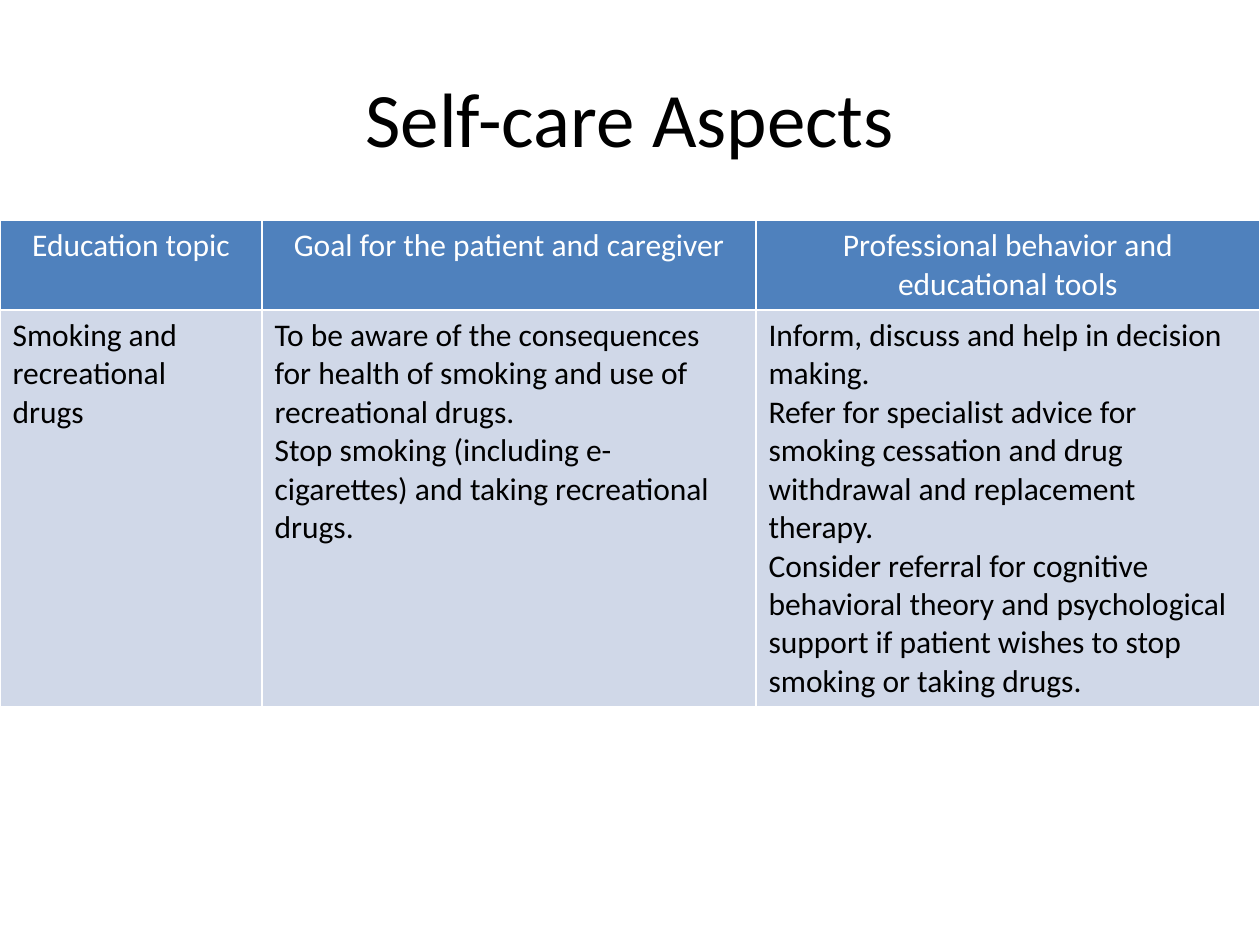
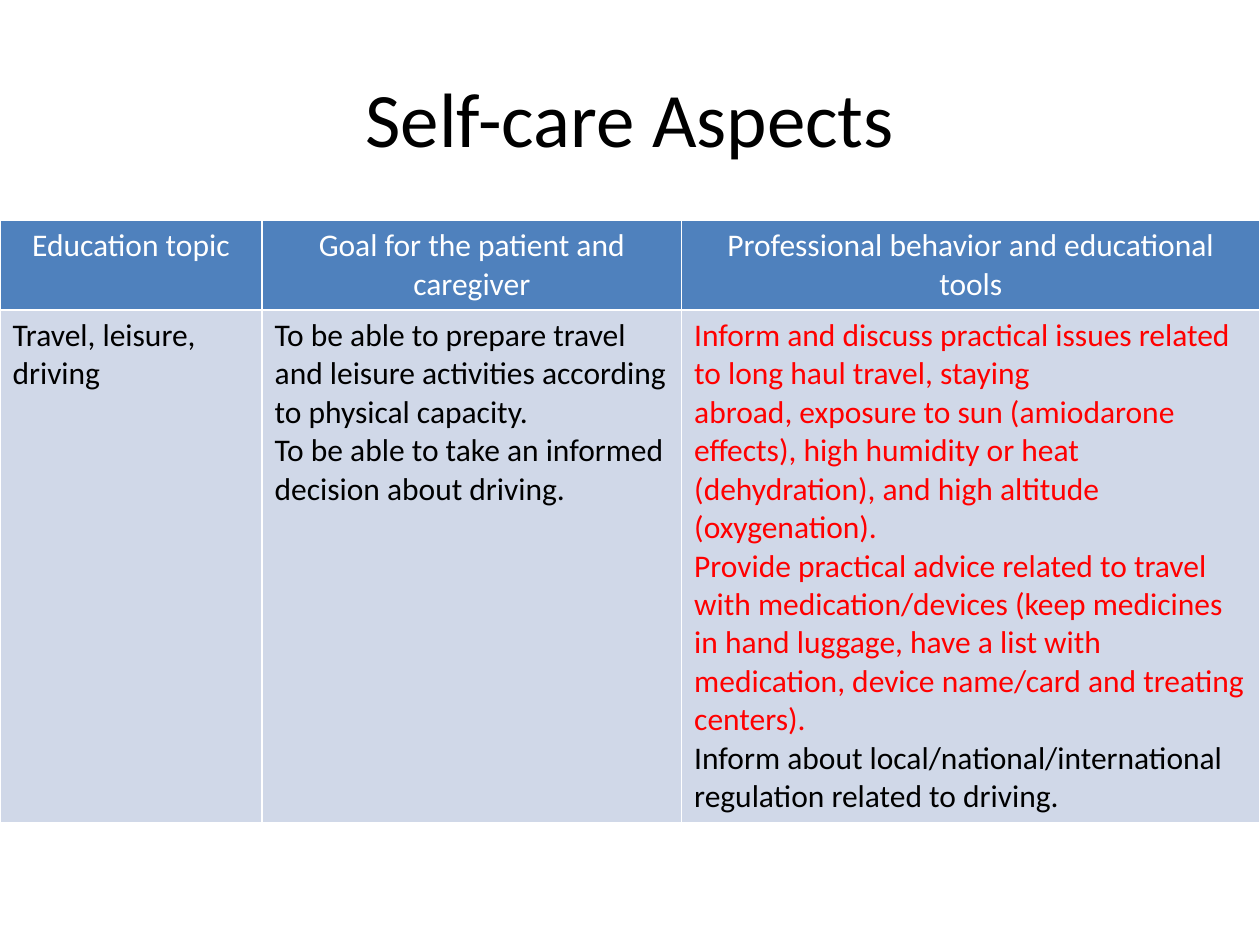
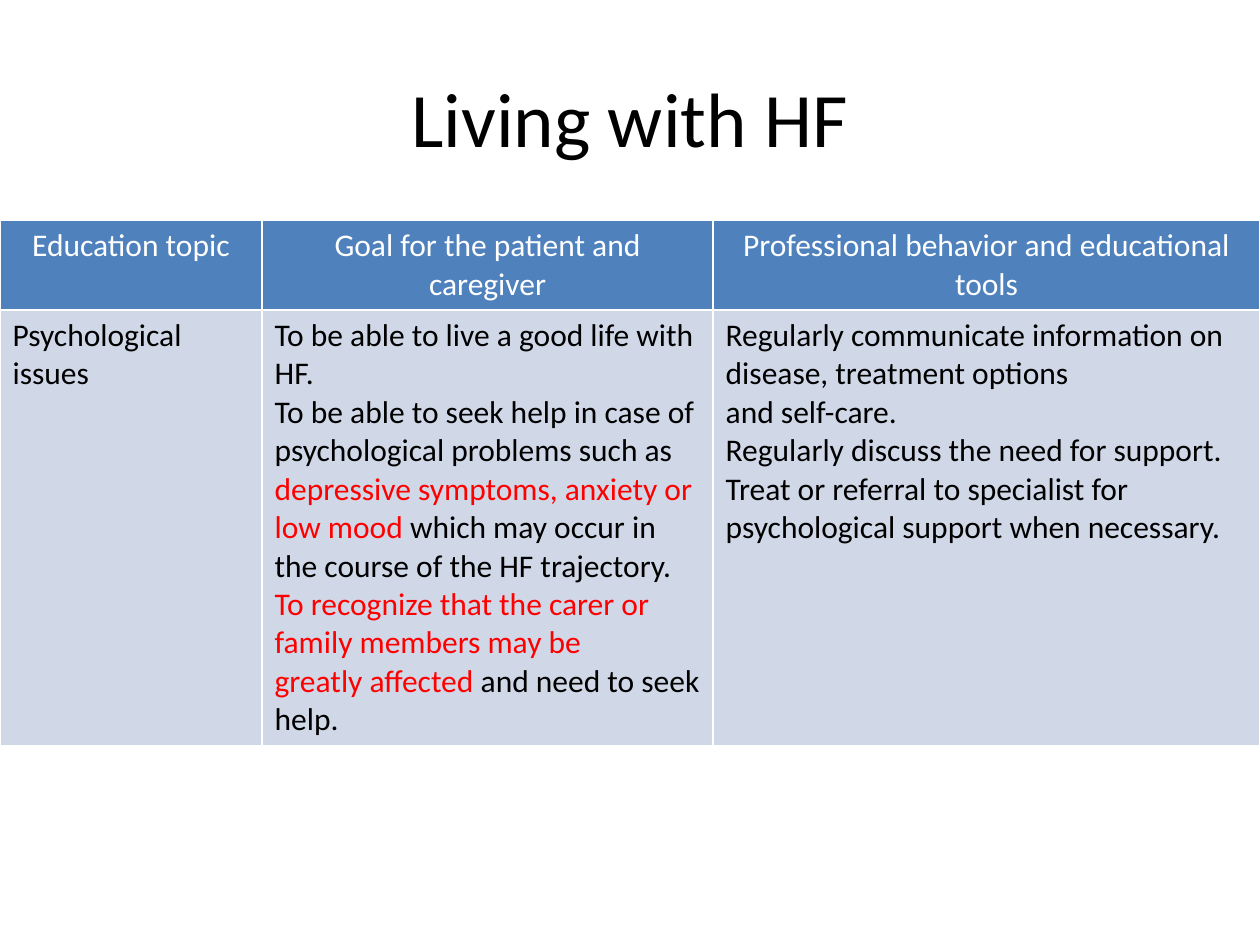
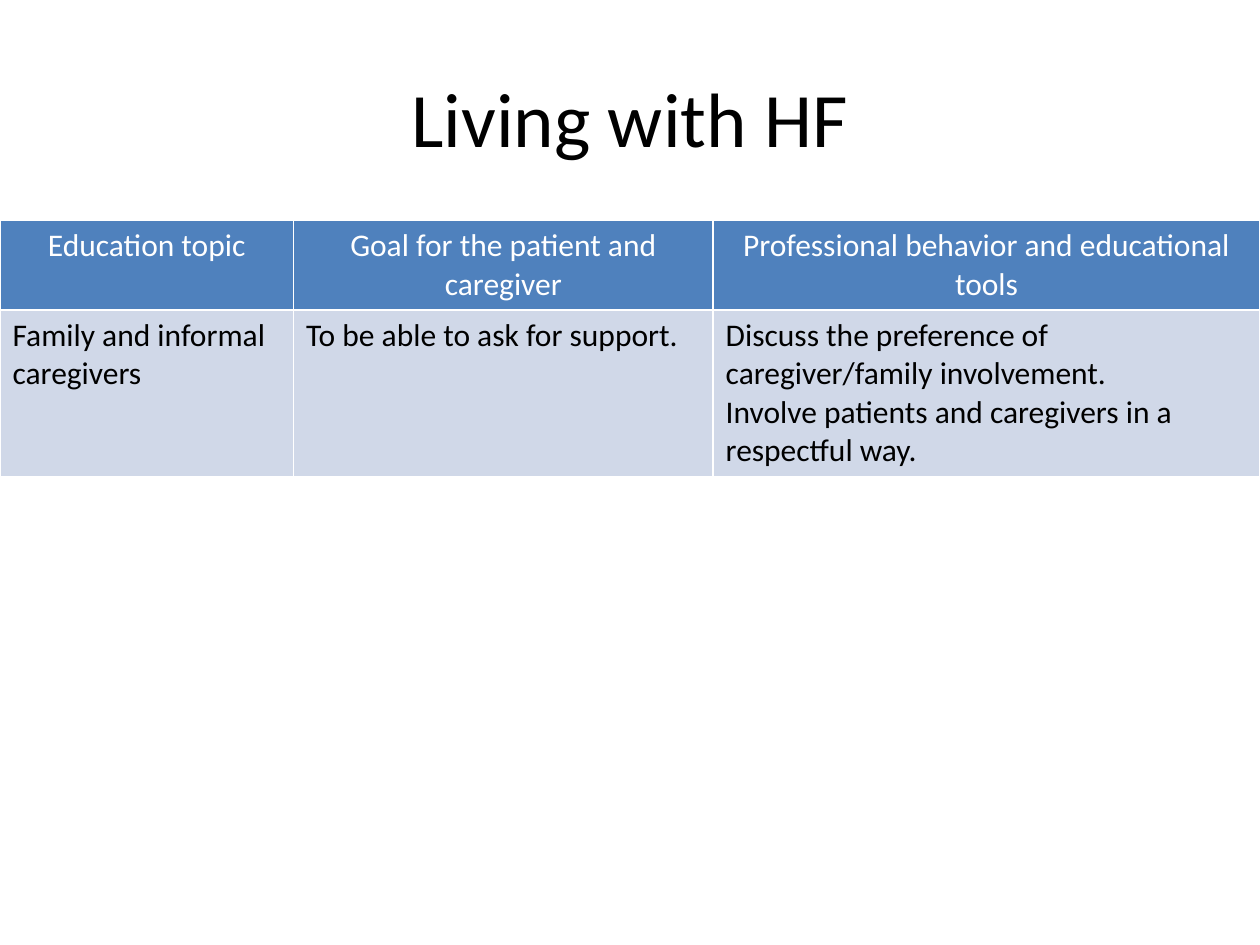
"""Build four patient education slides, each with a title and a table."""
from pptx import Presentation
from pptx.dml.color import RGBColor as RGB
from pptx.enum.text import MSO_ANCHOR as ANCHOR, PP_ALIGN as ALIGN
from pptx.util import Inches, Pt

COLORS = {"black": "000000", "white": "FFFFFF", "red": "FF0000",
          "header": "4F81BD", "body": "D0D8E8"}
FONT = "Calibri"
WIDTH = 10
HEADERS = [["Education topic"],
           ["Goal for the patient and caregiver"],
           ["Professional behavior and educational tools"]]

SLIDES = [
    ("Self-care Aspects", 3.8, (2.08, 3.92), [
        ["Smoking and recreational", "drugs"],
        ["To be aware of the consequences for health of smoking and use of "
         "recreational drugs.",
         "Stop smoking (including e-cigarettes) and taking recreational",
         "drugs."],
        ["Inform, discuss and help in decision making.",
         "Refer for specialist advice for smoking cessation and drug "
         "withdrawal and replacement therapy.",
         "Consider referral for cognitive behavioral theory and psychological "
         "support if patient wishes to stop smoking or taking drugs."],
    ]),
    ("Self-care Aspects", 4.7, (2.08, 3.33), [
        ["Travel, leisure, driving"],
        ["To be able to prepare travel and leisure activities according",
         "to physical capacity.",
         "To be able to take an informed decision about driving."],
        ["*Inform and discuss practical issues related to long haul travel, "
         "staying*",
         "*abroad, exposure to sun (amiodarone effects), high humidity or heat "
         "(dehydration), and high altitude (oxygenation).*",
         "*Provide practical advice related to travel with medication/devices "
         "(keep medicines in hand luggage, have a list with medication, "
         "device name/card and treating centers).*",
         "Inform about local/national/international regulation related to "
         "driving."],
    ]),
    ("Living with HF", 4.1, (2.08, 3.58), [
        ["Psychological issues"],
        ["To be able to live a good life with HF.",
         "To be able to seek help in case of psychological problems such as "
         "*depressive symptoms, anxiety or low mood *which may occur in the "
         "course of the HF trajectory.",
         "*To recognize that the carer or family members may be*",
         "*greatly affected *and need to seek help."],
        ["Regularly communicate information on disease, treatment options",
         "and self-care.",
         "Regularly discuss the need for support.",
         "Treat or referral to specialist for psychological support when "
         "necessary."],
    ]),
    ("Living with HF", 2, (2.33, 3.33), [
        ["Family and informal", "caregivers"],
        ["To be able to ask for support."],
        ["Discuss the preference of caregiver/family involvement.",
         "Involve patients and caregivers in a respectful way."],
    ]),
]


def write(tf, paragraphs, size=18, color="black", align=ALIGN.LEFT):
    """Fill a text frame, with the words between asterisks in red."""
    for i, text in enumerate(paragraphs):
        p = tf.add_paragraph() if i else tf.paragraphs[0]
        p.alignment = align
        for j, part in enumerate(text.split("*")):
            if part:
                r = p.add_run()
                r.text = part
                r.font.name = FONT
                r.font.size = Pt(size)
                r.font.bold = False
                r.font.color.rgb = RGB.from_string(COLORS["red" if j % 2 else color])


prs = Presentation()
prs.slide_width, prs.slide_height = Inches(WIDTH), Inches(7.5)

for title, height, widths, topic in SLIDES:
    s = prs.slides.add_slide(prs.slide_layouts[5])
    sp = s.shapes.title
    sp.left, sp.top = Inches(0.5), Inches(0.3)
    sp.width, sp.height = Inches(9), Inches(1.25)
    sp.text_frame.vertical_anchor = ANCHOR.MIDDLE
    write(sp.text_frame, [title], size=44, align=ALIGN.CENTER)

    frame = s.shapes.add_table(2, 3, 0, Inches(1.75), Inches(WIDTH), Inches(height))
    table = frame.table
    table.horz_banding = False
    for column, width in zip(table.columns, (*widths, WIDTH - sum(widths))):
        column.width = Inches(width)
    for row in table.rows:
        row.height = Inches(0.41)
    frame.height = Inches(height)

    for col, (header, body) in enumerate(zip(HEADERS, topic)):
        for row, fill in enumerate(("header", "body")):
            cell = table.cell(row, col)
            cell.fill.solid()
            cell.fill.fore_color.rgb = RGB.from_string(COLORS[fill])
        write(table.cell(0, col).text_frame, header, color="white", align=ALIGN.CENTER)
        write(table.cell(1, col).text_frame, body)

prs.save("out.pptx")
